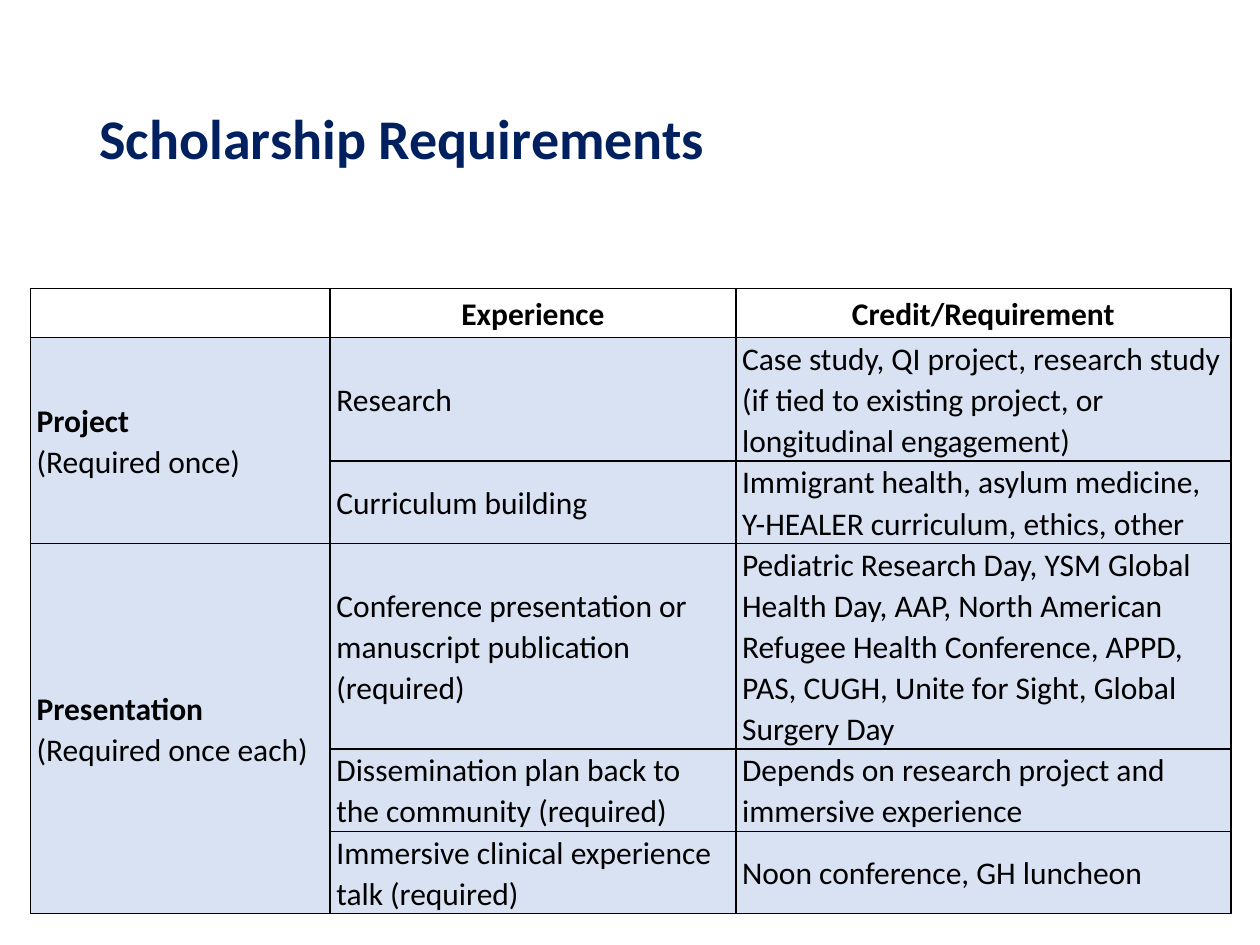
from dataclasses import dataclass

from lxml.etree import SubElement
from pptx import Presentation
from pptx.dml.color import RGBColor
from pptx.enum.text import MSO_ANCHOR, PP_ALIGN
from pptx.oxml.ns import qn
from pptx.util import Inches, Pt


@dataclass(frozen=True)
class Theme:
    font: str = "Calibri"
    title_color: str = "002060"
    text_color: str = "000000"
    border_color: str = "000000"
    body_fill: str = "D9E2F3"
    title_size: int = 32
    table_size: int = 18
    border_width: int = 1


THEME = Theme()

COLUMN_WIDTHS = [2.38, 3.22, 3.93]
ROW_HEIGHTS = [0.39, 0.98, 0.65, 1.63, 0.65, 0.65]
HEADINGS = ["", "Experience", "Credit/Requirement"]
CATEGORIES = [
    ("Project\n(Required once)", [
        ("Research",
         "Case study, QI project, research study (if tied to existing project, "
         "or longitudinal engagement)"),
        ("Curriculum building",
         "Immigrant health, asylum medicine, Y-HEALER curriculum, ethics, other"),
    ]),
    ("Presentation\n(Required once each)", [
        ("Conference presentation or manuscript publication (required)",
         "Pediatric Research Day, YSM Global Health Day, AAP, North American "
         "Refugee Health Conference, APPD, PAS, CUGH, Unite for Sight, Global "
         "Surgery Day"),
        ("Dissemination plan back to the community (required)",
         "Depends on research project and immersive experience"),
        ("Immersive clinical experience talk (required)",
         "Noon conference, GH luncheon"),
    ]),
]


def format_runs(paragraph, size, color, bold):
    for run in paragraph.runs:
        run.font.name = THEME.font
        run.font.size = Pt(size)
        run.font.bold = bold
        run.font.color.rgb = RGBColor.from_string(color)


def add_borders(cell):
    properties = cell._tc.get_or_add_tcPr()
    for position, side in enumerate(("a:lnL", "a:lnR", "a:lnT", "a:lnB")):
        border = SubElement(properties, qn(side), w=str(Pt(THEME.border_width)))
        fill = SubElement(border, qn("a:solidFill"))
        SubElement(fill, qn("a:srgbClr"), val=THEME.border_color)
        properties.insert(position, border)


def style_cell(cell, fill_color=None):
    cell.margin_left = cell.margin_right = Inches(0.05)
    cell.margin_top = cell.margin_bottom = 0
    cell.vertical_anchor = MSO_ANCHOR.MIDDLE
    if fill_color:
        cell.fill.solid()
        cell.fill.fore_color.rgb = RGBColor.from_string(fill_color)
    else:
        cell.fill.background()
    add_borders(cell)


def write_cell(cell, text, bold_first=False, align=PP_ALIGN.LEFT):
    cell.text_frame.text = text
    for index, paragraph in enumerate(cell.text_frame.paragraphs):
        paragraph.alignment = align
        paragraph.line_spacing = 1.07
        format_runs(paragraph, THEME.table_size, THEME.text_color,
                    bold_first and index == 0)


def place_title(slide, left, top, width, height):
    title = slide.shapes.title
    title.left, title.top = Inches(left), Inches(top)
    title.width, title.height = Inches(width), Inches(height)
    title.text_frame.text = "Scholarship Requirements"
    title.text_frame.vertical_anchor = MSO_ANCHOR.MIDDLE
    heading = title.text_frame.paragraphs[0]
    heading.alignment = PP_ALIGN.LEFT
    heading.line_spacing = 0.9
    format_runs(heading, THEME.title_size, THEME.title_color, True)


def place_requirements(slide, left, top, width, height):
    table = slide.shapes.add_table(
        len(ROW_HEIGHTS), len(COLUMN_WIDTHS),
        Inches(left), Inches(top), Inches(width), Inches(height)).table
    table.first_row = table.horz_banding = False
    for column, column_width in zip(table.columns, COLUMN_WIDTHS):
        column.width = Inches(column_width)
    for index, (row, row_height) in enumerate(zip(table.rows, ROW_HEIGHTS)):
        row.height = Inches(row_height)
        for cell in row.cells:
            style_cell(cell, THEME.body_fill if index else None)

    for column, heading in enumerate(HEADINGS):
        write_cell(table.cell(0, column), heading, True, PP_ALIGN.CENTER)
    first = 1
    for category, entries in CATEGORIES:
        category_cell = table.cell(first, 0)
        category_cell.merge(table.cell(first + len(entries) - 1, 0))
        write_cell(category_cell, category, True)
        for row, (experience, credit) in enumerate(entries, first):
            write_cell(table.cell(row, 1), experience)
            write_cell(table.cell(row, 2), credit)
        first += len(entries)


def main():
    presentation = Presentation()
    presentation.slide_width = Inches(10)
    presentation.slide_height = Inches(7.5)
    slide = presentation.slides.add_slide(presentation.slide_layouts[5])
    place_title(slide, 0.69, 0.4, 8.62, 1.45)
    place_requirements(slide, 0.24, 2.29, sum(COLUMN_WIDTHS), sum(ROW_HEIGHTS))
    presentation.save("out.pptx")


if __name__ == "__main__":
    main()
